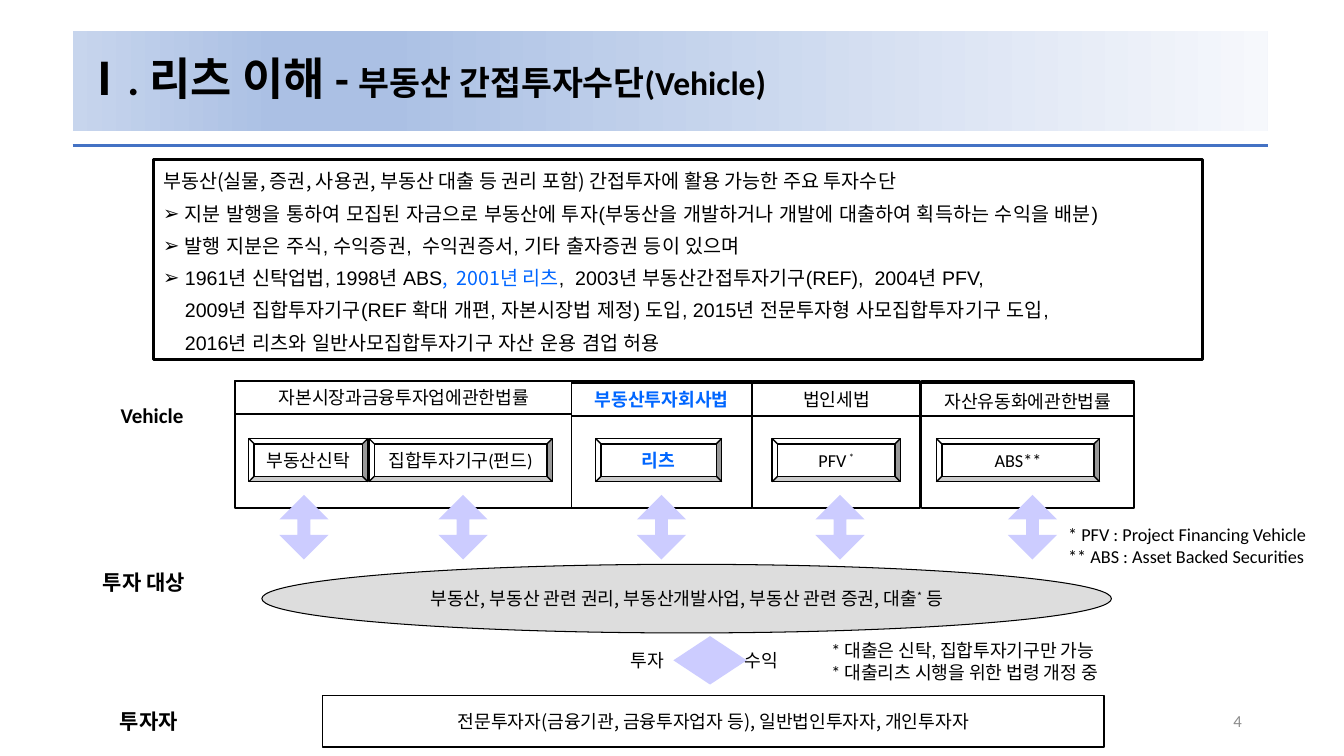
from dataclasses import dataclass

from lxml.etree import SubElement
from pptx import Presentation
from pptx.dml.color import RGBColor as Rgb
from pptx.enum.shapes import MSO_CONNECTOR as Connector, MSO_SHAPE as Preset
from pptx.enum.text import MSO_ANCHOR as Anchor, PP_ALIGN as Align
from pptx.oxml.ns import qn
from pptx.util import Cm, Pt


@dataclass(frozen=True)
class Theme:
    black: str = "000000"
    white: str = "FFFFFF"
    accent: str = "0066FF"
    rule: str = "4472C4"
    arrow: str = "CCCCFF"
    assets: str = "DDDDDD"
    muted: str = "8C8C8C"
    banner: tuple = ((0, "C7D5ED"), (17, "ABC0E4"), (26, "ABC0E4"), (100, "F6F8FC"))
    latin: str = "Calibri"
    plain: str = "Arial"
    korean: str = "Noto Sans CJK KR"
    title: int = 32
    subtitle: int = 24
    label: int = 15
    summary: int = 14
    body: int = 13
    page: int = 12


@dataclass(frozen=True)
class Span:
    text: str
    size: float = Theme.body
    font: str = Theme.latin
    color: str = Theme.black
    bold: bool = False
    raised: bool = False


class SlideBuilder:
    def __init__(self, slide, theme):
        self.slide = slide
        self.theme = theme

    def shape(self, preset, place, fill=None, line=None, weight=1.0, adjust=()):
        box = self.slide.shapes.add_shape(preset, *map(Cm, place))
        box.shadow.inherit = False
        if fill:
            box.fill.solid()
            box.fill.fore_color.rgb = Rgb.from_string(fill)
        else:
            box.fill.background()
        if line:
            box.line.color.rgb = Rgb.from_string(line)
            box.line.width = Pt(weight)
        else:
            box.line.fill.background()
        for index, value in enumerate(adjust):
            box.adjustments[index] = value
        return box

    def framed(self, place, *spans, fill=None, preset=Preset.RECTANGLE, weight=1.0,
               adjust=(), **layout):
        box = self.shape(preset, place, fill, self.theme.black, weight, adjust)
        self.fill_text(box, [spans], align=Align.CENTER, **layout)

    def arrow(self, place, head):
        self.shape(Preset.UP_DOWN_ARROW, place, self.theme.arrow, adjust=(0.5, head))

    def text(self, place, *paragraphs, **layout):
        box = self.slide.shapes.add_textbox(*map(Cm, place))
        self.fill_text(box, paragraphs, **layout)

    def label(self, left, top, words):
        self.text((left, top, 3, 0.89), [Span(words, self.theme.label, bold=True)])

    def fill_text(self, box, paragraphs, align=Align.LEFT, anchor=Anchor.TOP, wrap=True,
                  spacing=None, before=None):
        frame = box.text_frame
        frame.word_wrap = wrap
        frame.vertical_anchor = anchor
        for index, spans in enumerate(paragraphs):
            para = frame.add_paragraph() if index else frame.paragraphs[0]
            para.alignment = align
            para.line_spacing = spacing
            para.space_before = before
            for span in spans:
                run = para.add_run()
                run.text = span.text
                run.font.size = Pt(span.size)
                run.font.name = span.font
                run.font.bold = span.bold
                run.font.color.rgb = Rgb.from_string(span.color)
                props = run._r.get_or_add_rPr()
                SubElement(props, qn("a:ea"), typeface=span.font)
                if span.raised:
                    props.set("baseline", "30000")
        return frame

    def banner(self, place, *spans):
        box = self.shape(Preset.RECTANGLE, place)
        box.fill.gradient()
        box.fill.gradient_angle = 0
        stops = box._element.spPr.find(qn("a:gradFill")).find(qn("a:gsLst"))
        for stop in list(stops):
            stops.remove(stop)
        for percent, color in self.theme.banner:
            stop = SubElement(stops, qn("a:gs"), pos=str(percent * 1000))
            SubElement(stop, qn("a:srgbClr"), val=color)
        self.fill_text(box, [spans], anchor=Anchor.MIDDLE, spacing=0.9)

    def rule(self, left, right, top):
        line = self.slide.shapes.add_connector(
            Connector.STRAIGHT, Cm(left), Cm(top), Cm(right), Cm(top))
        line.line.color.rgb = Rgb.from_string(self.theme.rule)
        line.line.width = Pt(2.25)
        SubElement(line._element.spPr, qn("a:effectLst"))

    def summary(self, place, paragraphs, bulleted):
        box = self.shape(Preset.RECTANGLE, place, line=self.theme.black, weight=2)
        frame = self.fill_text(box, paragraphs, anchor=Anchor.MIDDLE,
                               spacing=Pt(20.2), before=Pt(2.8))
        indent = Cm(0.55)
        for index, para in enumerate(frame.paragraphs[1:], 1):
            props = para._p.get_or_add_pPr()
            props.set("marL", str(int(indent)))
            if index in bulleted:
                props.set("indent", str(-int(indent)))
                SubElement(props, qn("a:buFont"), typeface=self.theme.plain)
                SubElement(props, qn("a:buChar"), char="➢")


def main():
    deck = Presentation()
    deck.slide_width, deck.slide_height = Cm(33.87), Cm(19.05)
    theme = Theme()
    page = SlideBuilder(deck.slides.add_slide(deck.slide_layouts[6]), theme)

    # Title
    page.banner((1.83, 0.79, 30.12, 2.51),
                Span("Ⅰ", theme.title, theme.korean, bold=True),
                Span(". 리츠 이해 - ", theme.title, bold=True),
                Span("부동산 간접투자수단(Vehicle)", theme.subtitle, bold=True))
    page.rule(1.83, 31.95, 3.66)

    # Summary
    def plain(words):
        return Span(words, theme.summary, theme.plain)

    page.summary((3.86, 4.01, 26.44, 5.05), [
        [Span("부동산(실물, 증권, 사용권, 부동산 대출 등 권리 포함) 간접투자에 활용 가능한 주요 투자수단",
              theme.summary, theme.korean)],
        [plain("지분 발행을 통하여 모집된 자금으로 부동산에 투자(부동산을 개발하거나 개발에 대출하여 획득하는 수익을 배분)")],
        [plain("발행 지분은 주식, 수익증권,  수익권증서, 기타 출자증권 등이 있으며")],
        [plain("1961년 신탁업법, 1998년 ABS"),
         Span(",  2001년 리츠", theme.summary, theme.korean, theme.accent),
         plain(",  2003년 부동산간접투자기구(REF),  2004년 PFV,")],
        [plain("2009년 집합투자기구(REF 확대 개편, 자본시장법 제정) 도입, 2015년 전문투자형 사모집합투자기구 도입,")],
        [plain("2016년 리츠와 일반사모집합투자기구 자산 운용 겸업 허용")],
    ], bulleted=(1, 2, 3))

    # Laws: left, width, header top, line spacing, name
    def reit(words):
        return Span(words, font=theme.korean, color=theme.accent, bold=True)

    laws = [
        (5.92, 8.51, 9.6, None, Span("자본시장과금융투자업에관한법률", font=theme.plain)),
        (14.4, 4.55, 9.65, None, reit("부동산투자회사법")),
        (18.97, 4.22, 9.65, None, Span("법인세법")),
        (23.22, 5.36, 9.65, 1.1, Span("자산유동화에관한법률")),
    ]
    for left, width, top, spacing, name in laws:
        page.shape(Preset.RECTANGLE, (left, 9.6, width, 3.2), theme.white, theme.black)
        page.framed((left, top, width, 0.83), name, fill=theme.white, spacing=spacing)

    # Vehicles: left, width, arrow left, name
    vehicles = [
        (9.3, 4.62, 11.05, [Span("집합투자기구(펀드)")]),
        (6.27, 3, 7.04, [Span("부동산신탁")]),
        (15.01, 3.18, 16.05, [reit("리츠")]),
        (19.46, 3.23, 20.55, [Span("PFV"), Span(" *", raised=True)]),
        (23.6, 4.11, 25.4, [Span("ABS**")]),
    ]
    for left, width, arrow_left, name in vehicles:
        page.framed((left, 11.05, width, 1.09), *name, fill=theme.white,
                    preset=Preset.BEVEL, adjust=(0.125,), anchor=Anchor.MIDDLE, wrap=False)
        page.arrow((arrow_left, 12.47, 1.24, 1.63), 0.26)

    # Investment targets
    page.framed((6.6, 14.22, 21.41, 1.73),
                Span("부동산, 부동산 관련 권리, 부동산개발사업, 부동산 관련 증권, 대출", font=theme.korean),
                Span("*", font=theme.korean, raised=True),
                Span(" 등", font=theme.korean),
                fill=theme.assets, preset=Preset.OVAL, weight=0.75,
                anchor=Anchor.MIDDLE, wrap=False)

    # Investors and the flow between them and the targets
    page.arrow((16.97, 16.03, 1.85, 1.22), 0.2)
    for left, flow in ((15.49, "투자"), (18.36, "수익")):
        page.text((left, 16.23, 1.65, 0.81), [Span(flow)], align=Align.CENTER)
    page.framed((8.13, 17.53, 19.69, 1.3),
                Span("전문투자자(금융기관, 금융투자업자 등), 일반법인투자자, 개인투자자", font=theme.korean),
                anchor=Anchor.MIDDLE, wrap=False)

    # Row labels
    for left, top, words in ((2.79, 10.03, "Vehicle"), (2.34, 14.22, "투자 대상"),
                             (2.77, 17.73, "투자자")):
        page.label(left, top, words)

    # Notes and page number
    page.text((20.7, 15.98, 9.8, 1.37),
              [Span("* 대출은 신탁, 집합투자기구만 가능")],
              [Span("* 대출리츠 시행을 위한 법령 개정 중")])
    page.text((26.67, 13.06, 7.2, 1.37),
              [Span("* PFV : Project Financing Vehicle")],
              [Span("** ABS : Asset Backed Securities")])
    page.text((23.93, 17.65, 7.62, 1.02), [Span("4", theme.page, color=theme.muted)],
              align=Align.RIGHT, anchor=Anchor.MIDDLE)

    deck.save("out.pptx")


if __name__ == "__main__":
    main()
